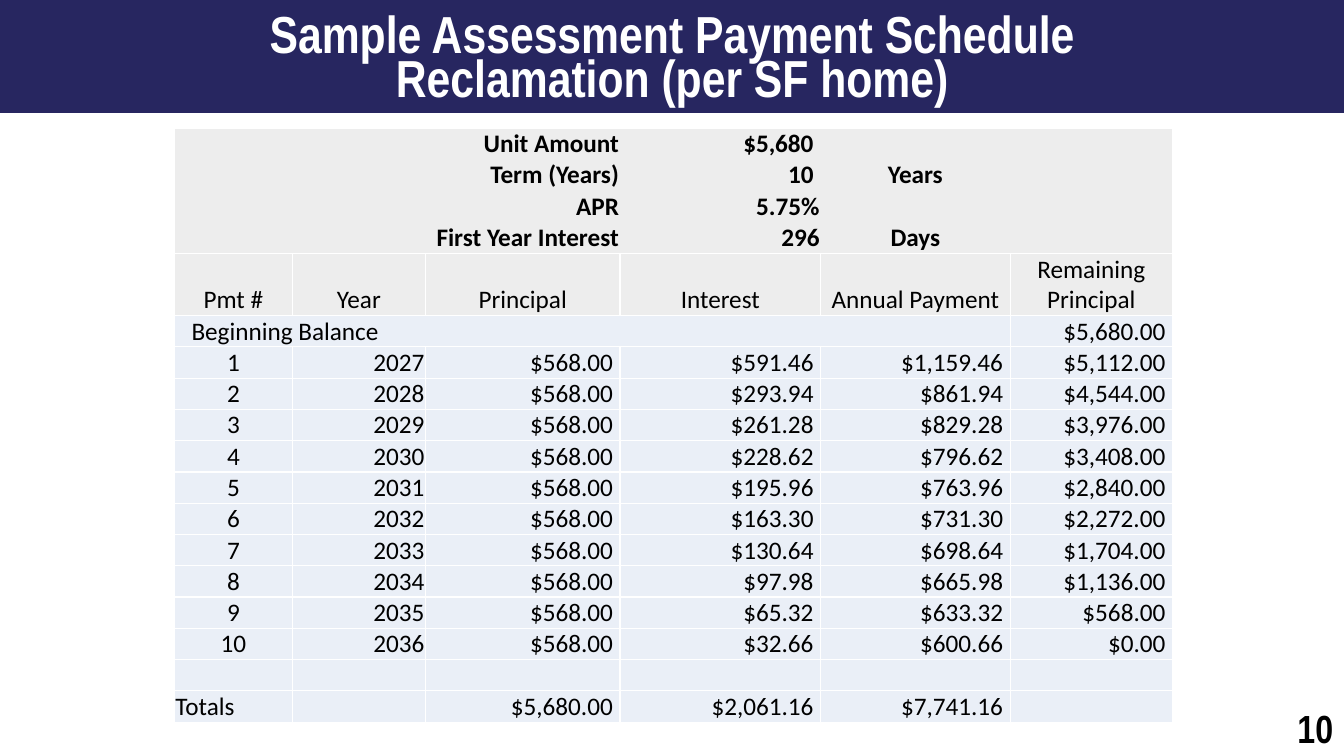
from lxml import etree
from pptx import Presentation
from pptx.dml.color import RGBColor
from pptx.enum.shapes import MSO_SHAPE
from pptx.enum.text import MSO_ANCHOR, MSO_AUTO_SIZE, PP_ALIGN
from pptx.oxml.ns import qn
from pptx.util import Inches, Pt

LEFT, CENTER, RIGHT = PP_ALIGN.LEFT, PP_ALIGN.CENTER, PP_ALIGN.RIGHT
MIDDLE, BOTTOM = MSO_ANCHOR.MIDDLE, MSO_ANCHOR.BOTTOM
RECTANGLE = MSO_SHAPE.RECTANGLE
NO_AUTOFIT = MSO_AUTO_SIZE.NONE
TITLE_ONLY = 5

COLORS = {"banner": "272660", "white": "FFFFFF", "black": "000000",
          "terms": "EDEDED", "schedule": "EAEFF7"}
HEADING_FONT, TABLE_FONT = "Arial Narrow", "Calibri"

# Table grid, in inches
TABLE_LEFT, TABLE_TOP = 1.73, 1.27
COLUMN_WIDTHS = [1.17, 1.32, 1.93, 1.99, 1.88, 1.61]
ROW_HEIGHT = 0.31
CELL_INSET, MONEY_INSET, BALANCE_INSET = 0.01, 0.07, 0.17

# Loan terms: label, value, unit, right inset of the value
TERMS = [("Unit Amount", "$5,680", "", MONEY_INSET),
         ("Term (Years)", "10", "Years", MONEY_INSET),
         ("APR", "5.75%", "", CELL_INSET),
         ("First Year Interest", "296", "Days", CELL_INSET)]
HEADERS = ["Pmt #", "Year", "Principal", "Interest", "Annual Payment",
           "Remaining Principal"]
HEADER_ROW = len(TERMS)
UNIT_AMOUNT, PRINCIPAL, FIRST_YEAR = 5680, 568, 2027
INTEREST = [591.46, 293.94, 261.28, 228.62, 195.96,
            163.30, 130.64, 97.98, 65.32, 32.66]


def rgb(name):
    return RGBColor.from_string(COLORS[name])


def money(amount):
    return f"${amount:,.2f}"


def add_run(paragraph, text, font, size, color, bold=False):
    run = paragraph.add_run()
    run.text = text
    run.font.name, run.font.size, run.font.bold = font, Pt(size), bold
    run.font.color.rgb = rgb(color)


def add_banner(slide, width, height):
    banner = slide.shapes.add_shape(RECTANGLE, 0, Inches(-0.11), width,
                                    round(height * 0.164))
    banner.shadow.inherit = False
    banner.fill.solid()
    banner.fill.fore_color.rgb = rgb("banner")
    banner.line.fill.background()
    # Send behind the title
    slide.shapes._spTree.insert(2, banner._element)


def fill_title(title, lines):
    title.left, title.top = Inches(1.41), Inches(0.13)
    title.width, title.height = Inches(10.52), Inches(0.98)
    frame = title.text_frame
    frame.auto_size, frame.word_wrap = NO_AUTOFIT, True
    frame.vertical_anchor = MIDDLE
    for index, line in enumerate(lines):
        paragraph = frame.add_paragraph() if index else frame.paragraphs[0]
        paragraph.alignment, paragraph.line_spacing = CENTER, 0.7
        add_run(paragraph, line, HEADING_FONT, 37.2, "white", True)


def add_page_number(slide, number):
    page_box = slide.shapes.add_textbox(Inches(12.77), Inches(6.99),
                                        Inches(0.57), Inches(0.51))
    page_box.text_frame.word_wrap = True
    paragraph = page_box.text_frame.paragraphs[0]
    paragraph.line_spacing = 0.9
    add_run(paragraph, number, HEADING_FONT, 28, "black", True)


def set_borders(cell, visible_sides):
    properties = cell._tc.get_or_add_tcPr()
    for index, side in enumerate("LRTB"):
        line = etree.Element(qn(f"a:ln{side}"), w=str(Pt(1)))
        if side in visible_sides:
            fill = etree.SubElement(line, qn("a:solidFill"))
            etree.SubElement(fill, qn("a:srgbClr"), val=COLORS["white"])
        else:
            etree.SubElement(line, qn("a:noFill"))
        properties.insert(index, line)


def format_cell(cell, row, column):
    cell.vertical_anchor = BOTTOM
    cell.margin_left = cell.margin_right = Inches(CELL_INSET)
    cell.margin_top, cell.margin_bottom = Inches(0.005), 0
    cell.fill.solid()
    cell.fill.fore_color.rgb = rgb("terms" if row <= HEADER_ROW else "schedule")
    # The terms block shows only its outer border
    outer = {"L": column == 0, "R": column == len(COLUMN_WIDTHS) - 1,
             "T": row == 0, "B": row == HEADER_ROW - 1}
    set_borders(cell, [side for side in outer
                       if row >= HEADER_ROW or outer[side]])


def write_cell(cell, text, align, bold=False, left=CELL_INSET, right=CELL_INSET):
    if not text:
        return
    cell.margin_left, cell.margin_right = Inches(left), Inches(right)
    paragraph = cell.text_frame.paragraphs[0]
    paragraph.alignment = align
    add_run(paragraph, text, TABLE_FONT, 18, "black", bold)


def write_amounts(table, row, amounts):
    for column, amount in amounts.items():
        write_cell(table.cell(row, column), money(amount), RIGHT,
                   right=MONEY_INSET)


def add_schedule(slide):
    balance_row = HEADER_ROW + 1
    totals_row = balance_row + len(INTEREST) + 2
    row_count = totals_row + 1
    table = slide.shapes.add_table(
        row_count, len(COLUMN_WIDTHS), Inches(TABLE_LEFT), Inches(TABLE_TOP),
        Inches(sum(COLUMN_WIDTHS)), Inches(ROW_HEIGHT * (row_count + 1))).table
    table.first_row = table.horz_banding = False
    for column, width in enumerate(COLUMN_WIDTHS):
        table.columns[column].width = Inches(width)
    for row in range(row_count):
        table.rows[row].height = Inches(ROW_HEIGHT * (1 + (row == HEADER_ROW)))
        for column in range(len(COLUMN_WIDTHS)):
            format_cell(table.cell(row, column), row, column)

    # Loan terms
    for row, (label, value, unit, inset) in enumerate(TERMS):
        table.cell(row, 0).merge(table.cell(row, 2))
        if not unit:
            table.cell(row, 4).merge(table.cell(row, 5))
        write_cell(table.cell(row, 0), label, RIGHT, True)
        write_cell(table.cell(row, 3), value, RIGHT, True, right=inset)
        write_cell(table.cell(row, 4), unit, CENTER, True)

    # Column headers and opening balance
    for column, header in enumerate(HEADERS):
        write_cell(table.cell(HEADER_ROW, column), header, CENTER)
    table.cell(balance_row, 0).merge(table.cell(balance_row, 4))
    write_cell(table.cell(balance_row, 0), "Beginning Balance", LEFT,
               left=BALANCE_INSET)
    write_amounts(table, balance_row, {5: UNIT_AMOUNT})

    # Yearly payments
    for payment, interest in enumerate(INTEREST, start=1):
        row = balance_row + payment
        write_cell(table.cell(row, 0), str(payment), CENTER)
        write_cell(table.cell(row, 1), str(FIRST_YEAR + payment - 1), RIGHT)
        write_amounts(table, row, {2: PRINCIPAL, 3: interest,
                                   4: PRINCIPAL + interest,
                                   5: UNIT_AMOUNT - PRINCIPAL * payment})

    # Totals
    write_cell(table.cell(totals_row, 0), "Totals", LEFT)
    write_amounts(table, totals_row, {2: UNIT_AMOUNT, 3: sum(INTEREST),
                                      4: UNIT_AMOUNT + sum(INTEREST)})


def main():
    deck = Presentation()
    deck.slide_width, deck.slide_height = Inches(13.33), Inches(7.5)
    slide = deck.slides.add_slide(deck.slide_layouts[TITLE_ONLY])
    add_banner(slide, deck.slide_width, deck.slide_height)
    fill_title(slide.shapes.title, ["Sample Assessment Payment Schedule",
                                    "Reclamation (per SF home)"])
    add_schedule(slide)
    add_page_number(slide, "10")
    deck.save("out.pptx")


if __name__ == "__main__":
    main()
